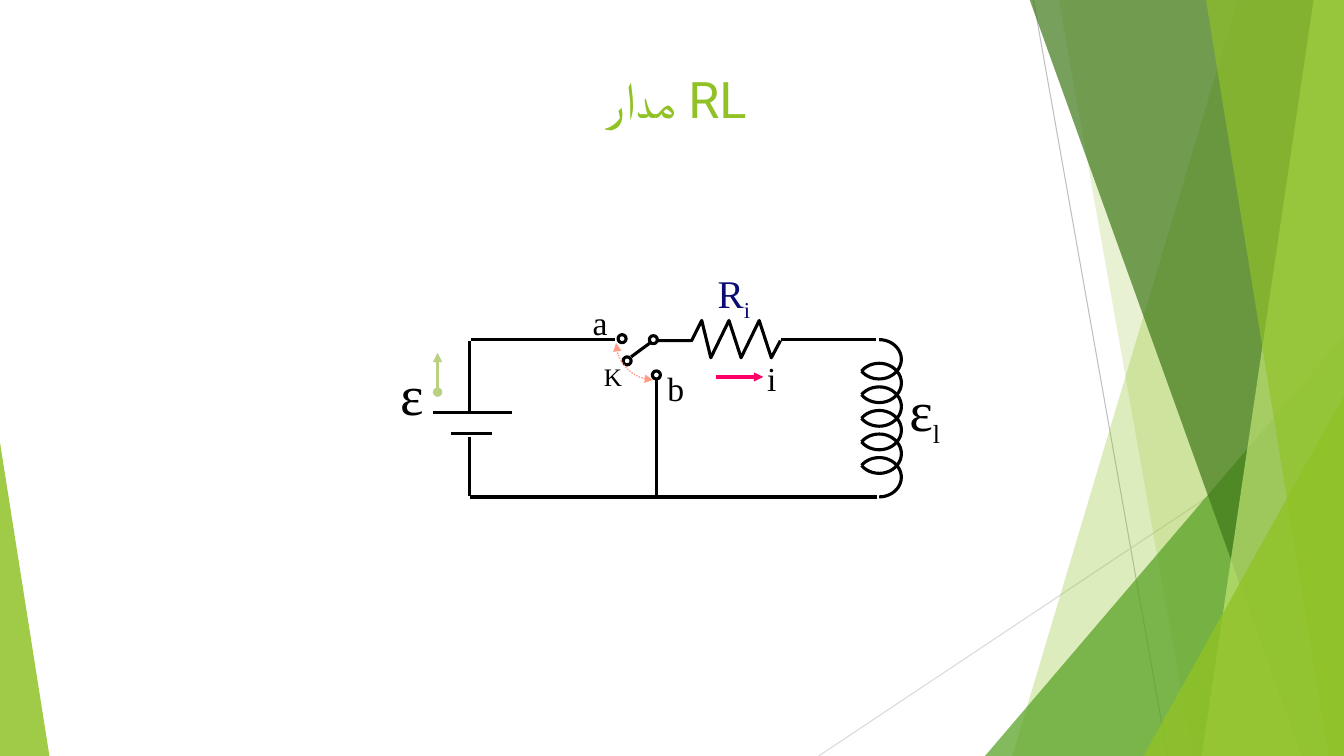
from math import cos, radians, sin

from lxml.etree import SubElement
from pptx import Presentation
from pptx.dml.color import RGBColor
from pptx.enum.dml import MSO_LINE_DASH_STYLE as Dash
from pptx.enum.shapes import MSO_CONNECTOR_TYPE as Connector, MSO_SHAPE as Preset
from pptx.enum.text import MSO_ANCHOR as Anchor, MSO_AUTO_SIZE as AutoSize, PP_ALIGN as Align
from pptx.oxml.ns import qn
from pptx.util import Inches, Pt

BLACK = RGBColor(0x00, 0x00, 0x00)
NAVY = RGBColor(0x0B, 0x0B, 0x73)
PINK = RGBColor(0xFF, 0x00, 0x66)
SALMON = RGBColor(0xFF, 0x9C, 0x85)
SAGE = RGBColor(0xB9, 0xD1, 0x81)
GREEN = RGBColor(0x90, 0xC2, 0x26)
MID_GREEN = RGBColor(0x54, 0xA0, 0x21)
DARK_GREEN = RGBColor(0x3F, 0x78, 0x19)
PALE_GREEN = RGBColor(0xC0, 0xE4, 0x74)
GREY = RGBColor(0xBF, 0xBF, 0xBF)
LIGHT_GREY = RGBColor(0xD9, 0xD9, 0xD9)

WIDTH, HEIGHT = 13.33, 7.5


def arc_points(center_x, center_y, radius_x, radius_y, start, end, steps=32):
    """Points along an ellipse, angles in degrees clockwise from the right."""
    angles = [radians(start + (end - start) * step / steps) for step in range(steps + 1)]
    return [(center_x + radius_x * cos(a), center_y + radius_y * sin(a)) for a in angles]


class CircuitSlide:
    title_font = "Roboto"
    label_font = "Times New Roman"
    wire_width = 2.25

    def __init__(self, presentation):
        self.master = presentation.slide_master
        self.slide = presentation.slides.add_slide(presentation.slide_layouts[5])
        self.shapes = self.slide.shapes
        self.backdrop_count = 0

    def title(self, text, left, top, width, height):
        shape = self.shapes.title
        shape.left, shape.top = Inches(left), Inches(top)
        shape.width, shape.height = Inches(width), Inches(height)
        shape.text_frame.text = text
        shape.text_frame.vertical_anchor = Anchor.TOP
        paragraph = shape.text_frame.paragraphs[0]
        paragraph.alignment = Align.CENTER
        paragraph.font.name = self.title_font
        paragraph.font.size = Pt(36)
        paragraph.font.color.rgb = GREEN

    def line(self, start, end, color=BLACK, width=wire_width, head=None, tail=None):
        ends = [Inches(value) for value in (*start, *end)]
        connector = self.shapes.add_connector(Connector.STRAIGHT, *ends)
        self.outline(connector, color, width, head, tail)
        SubElement(connector.element.spPr, qn("a:effectLst"))
        return connector

    def outline(self, shape, color=BLACK, width=wire_width, head=None, tail=None):
        shape.line.color.rgb = color
        shape.line.width = Pt(width)
        for tag, kind in (("a:headEnd", head), ("a:tailEnd", tail)):
            if kind:
                SubElement(shape.element.spPr.find(qn("a:ln")), qn(tag), type=kind)

    def freeform(self, points, close=False):
        corners = [(Inches(x), Inches(y)) for x, y in points]
        builder = self.shapes.build_freeform(*corners[0], scale=1.0)
        builder.add_line_segments(corners[1:], close=close)
        shape = builder.convert_to_shape()
        shape.shadow.inherit = False
        return shape

    def curve(self, points, color=BLACK, width=wire_width, dash=None, head=None, tail=None):
        shape = self.freeform(points)
        shape.fill.background()
        shape.line.color.rgb = color
        if dash:
            shape.line.dash_style = dash
        self.outline(shape, color, width, head, tail)

    def terminal(self, left, top, size=0.08):
        shape = self.shapes.add_shape(
            Preset.OVAL, Inches(left), Inches(top), Inches(size), Inches(size))
        shape.shadow.inherit = False
        shape.fill.background()
        self.outline(shape)

    def label(self, text, left, top, width, height, size, subscript="", sub_size=None,
              color=BLACK):
        box = self.shapes.add_textbox(Inches(left), Inches(top), Inches(width), Inches(height))
        box.text_frame.word_wrap = False
        box.text_frame.auto_size = AutoSize.SHAPE_TO_FIT_TEXT
        paragraph = box.text_frame.paragraphs[0]
        paragraph.font.name = self.label_font
        paragraph.font.size = Pt(size)
        paragraph.font.color.rgb = color
        paragraph.add_run().text = text
        if subscript:
            run = paragraph.add_run()
            run.text = subscript
            run.font.size = Pt(sub_size or size)
            run.font.element.set("baseline", "-25000") if hasattr(run.font, "element") \
                else run._r.get_or_add_rPr().set("baseline", "-25000")

    def to_master(self, shape):
        """Move a shape to the slide master, behind its placeholders."""
        self.backdrop_count += 1
        shape.element.xpath(".//p:cNvPr")[0].set("id", str(100 + self.backdrop_count))
        self.master.placeholders[0].element.addprevious(shape.element)

    def tint(self, shape, color, opacity):
        shape.shadow.inherit = False
        shape.line.fill.background()
        shape.fill.solid()
        shape.fill.fore_color.rgb = color
        fill_color = shape.element.spPr.find(qn("a:solidFill"))[0]
        SubElement(fill_color, qn("a:alpha"), val=str(opacity * 1000))
        self.to_master(shape)

    def band(self, top_left, bottom_left, color, opacity):
        """A backdrop strip from a slanted left edge to the slide's right edge."""
        points = [(top_left, -0.01), (WIDTH, -0.01), (WIDTH, HEIGHT), (bottom_left, HEIGHT)]
        self.tint(self.freeform(points, close=True), color, opacity)

    def triangle(self, left, top, width, apex, color, opacity):
        shape = self.shapes.add_shape(
            Preset.ISOSCELES_TRIANGLE, Inches(left), Inches(top),
            Inches(width), Inches(HEIGHT - top))
        shape.adjustments[0] = apex
        self.tint(shape, color, opacity)


def draw_backdrop(page):
    page.to_master(page.line((10.25, 0), (11.58, HEIGHT), GREY, 0.75))
    page.to_master(page.line((WIDTH, 4.03), (8.12, HEIGHT), LIGHT_GREY, 0.75))
    page.band(12.28, 10.04, GREEN, 30)
    page.band(10.5, 11.83, GREEN, 20)
    page.triangle(9.77, 3.33, 3.56, 1, MID_GREEN, 72)
    page.band(10.21, 12.91, DARK_GREEN, 70)
    page.band(13.03, 11.92, PALE_GREEN, 70)
    page.band(11.96, 13.18, GREEN, 65)
    page.triangle(11.34, 3.93, 1.99, 1, GREEN, 80)
    page.triangle(0, 4.39, 0.49, 0, GREEN, 85)


def draw_circuit(page):
    wires = [
        ((4.66, 3.38), (4.66, 4.09)), ((5.08, 4.09), (4.29, 4.09)),
        ((4.88, 4.3), (4.47, 4.3)), ((4.66, 4.34), (4.66, 4.92)),
        ((4.67, 3.37), (6.1, 3.37)), ((4.66, 4.93), (8.7, 4.93)),
        ((6.51, 4.91), (6.51, 3.76)), ((6.45, 3.4), (6.26, 3.54)),
        ((7.75, 3.37), (8.69, 3.37)),
    ]
    for start, end in wires:
        page.line(start, end)

    resistor = [(6.52, 3.38), (6.86, 3.38), (6.96, 3.18), (7.05, 3.55), (7.23, 3.18),
                (7.35, 3.55), (7.53, 3.18), (7.65, 3.55), (7.74, 3.38)]
    page.curve(resistor)

    for left, top in [(6.44, 3.33), (6.47, 3.68), (6.13, 3.32), (6.18, 3.54)]:
        page.terminal(left, top)
    page.curve(arc_points(6.49, 3.39, 0.38, 0.38, 92, 178), SALMON, 1,
               Dash.ROUND_DOT, "triangle", "triangle")

    turns = 6
    for turn in range(turns):
        start = -90 if turn == 0 else -143
        end = 90 if turn == turns - 1 else 143
        page.curve(arc_points(8.72, 3.565 + 0.234 * turn, 0.22, 0.195, start, end))

    page.line((7.1, 3.74), (7.57, 3.74), PINK, tail="triangle")
    page.line((4.34, 3.89), (4.34, 3.5), SAGE, head="oval", tail="triangle")

    page.label("ε", 3.87, 3.52, 0.43, 0.77, 40)
    page.label("ε", 8.92, 3.68, 0.52, 0.77, 40, "l", 32)
    page.label("i", 7.51, 3.5, 0.29, 0.5, 24)
    page.label("K", 5.89, 3.54, 0.38, 0.4, 18)
    page.label("a", 5.78, 2.95, 0.35, 0.5, 24)
    page.label("b", 6.52, 3.6, 0.37, 0.5, 24)
    page.label("R", 7.02, 2.62, 0.53, 0.57, 28, "i", color=NAVY)


def main():
    presentation = Presentation()
    presentation.slide_width, presentation.slide_height = Inches(WIDTH), Inches(HEIGHT)
    page = CircuitSlide(presentation)
    draw_backdrop(page)
    page.title("مدار RL", 2.33, 0.63, 8.75, 0.92)
    draw_circuit(page)
    presentation.save("out.pptx")


if __name__ == "__main__":
    main()
